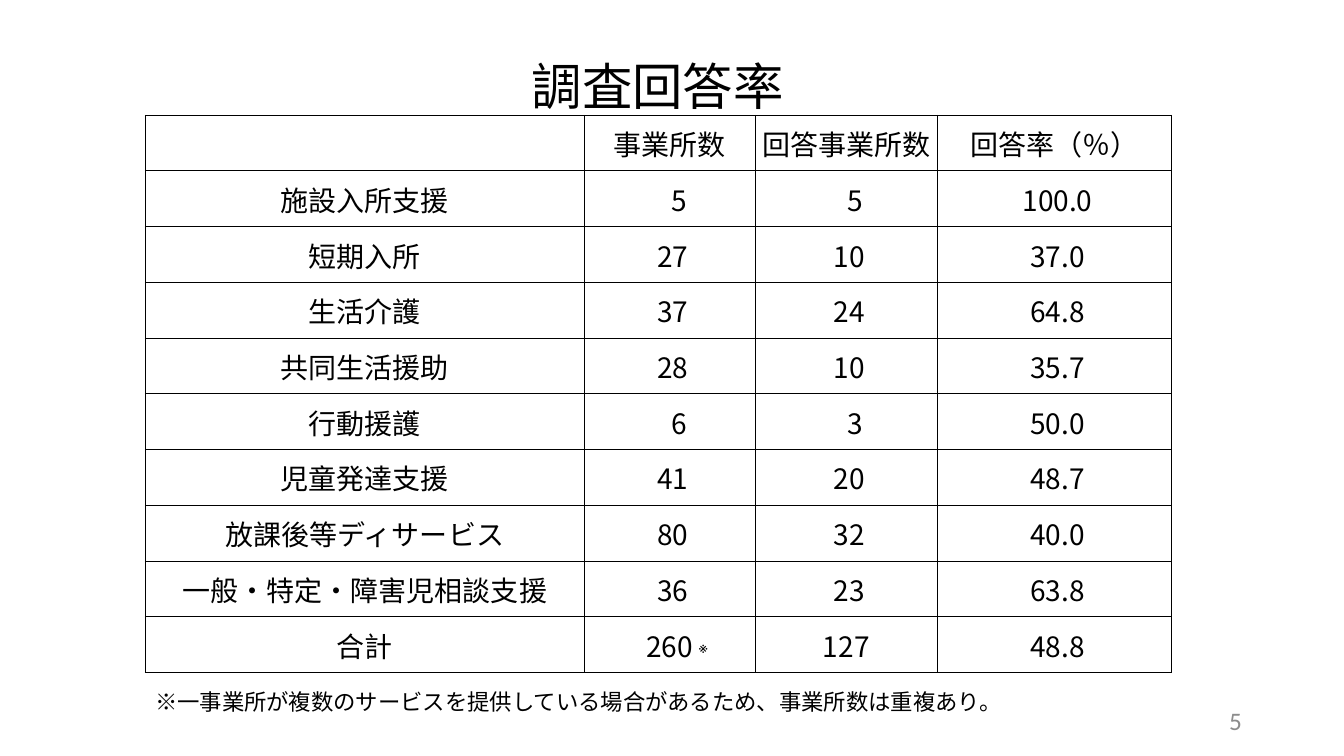
from dataclasses import dataclass

from lxml.etree import SubElement
from pptx import Presentation
from pptx.dml.color import RGBColor
from pptx.enum.text import MSO_ANCHOR, PP_ALIGN
from pptx.oxml.ns import qn
from pptx.util import Pt


@dataclass(frozen=True)
class Theme:
    ink: str = "000000"
    muted: str = "8C8C8C"
    cjk: str = "Noto Sans CJK JP"
    latin: str = "Calibri"
    mark_font: str = "Arial"
    title: int = 36
    cell: int = 20
    note: int = 16
    number: int = 18
    mark: int = 12
    border: float = 0.5
    cell_inset: float = 0.6


THEME = Theme()
COL_WIDTHS = (313.9, 121.7, 130.4, 167)
ROWS = [
    ("", "事業所数", "回答事業所数", "回答率（％）"),
    ("施設入所支援", "5", "5", "100.0"),
    ("短期入所", "27", "10", "37.0"),
    ("生活介護", "37", "24", "64.8"),
    ("共同生活援助", "28", "10", "35.7"),
    ("行動援護", "6", "3", "50.0"),
    ("児童発達支援", "41", "20", "48.7"),
    ("放課後等ディサービス", "80", "32", "40.0"),
    ("一般・特定・障害児相談支援", "36", "23", "63.8"),
    ("合計", "260", "127", "48.8"),
]
# Left inset that lines up centred figures, by number of characters
FIGURE_SHIFT = {1: 13.5, 2: 4.5, 3: 0, 4: 4.5, 5: 4.5}


def write(tf, text, size, font, color=THEME.ink, east_asian=THEME.cjk, **para):
    """Put one formatted run in the first paragraph of a text frame."""
    p = tf.paragraphs[0]
    for name, value in para.items():
        setattr(p, name, value)
    r = p.add_run()
    r.text = text
    for name, value in {"size": Pt(size), "name": font}.items():
        setattr(r.font, name, value)
    r.font.color.rgb = RGBColor.from_string(color)
    if east_asian:
        ea = SubElement(r.font._element, qn("a:ea"))
        ea.set("typeface", east_asian)


def add_text(s, box, text, size, font, anchor=MSO_ANCHOR.TOP, **style):
    """Add a wrapping text box filling the given box."""
    tf = s.shapes.add_textbox(*map(Pt, box)).text_frame
    for name, value in {"word_wrap": True, "vertical_anchor": anchor}.items():
        setattr(tf, name, value)
    write(tf, text, size, font, **style)


def add_borders(cell):
    """Draw a thin line on all four sides of a cell."""
    tcPr = cell._tc.get_or_add_tcPr()
    for side in ("lnL", "lnR", "lnT", "lnB"):
        ln = SubElement(tcPr, qn(f"a:{side}"), w=str(Pt(THEME.border)))
        fill = SubElement(ln, qn("a:solidFill"))
        SubElement(fill, qn("a:srgbClr"), val=THEME.ink)


def add_title(s, box):
    add_text(s, box, "調査回答率", THEME.title, THEME.cjk,
             alignment=PP_ALIGN.CENTER, line_spacing=Pt(50))


def add_rate_table(s, box):
    """Response-rate table, with the duplicate-count mark beside the total."""
    left, top, width, height = box
    table = s.shapes.add_table(len(ROWS), len(COL_WIDTHS), *map(Pt, box)).table
    for name in ("first_row", "horz_banding"):
        setattr(table, name, False)
    for col, col_width in zip(table.columns, COL_WIDTHS):
        col.width = Pt(col_width)
    for row in table.rows:
        row.height = Pt(height / len(ROWS))

    for i, values in enumerate(ROWS):
        for j, text in enumerate(values):
            cell = table.cell(i, j)
            shift = FIGURE_SHIFT[len(text)] if i and j else 0
            layout = {
                "vertical_anchor": MSO_ANCHOR.MIDDLE,
                "margin_left": Pt(THEME.cell_inset + shift),
                "margin_right": Pt(THEME.cell_inset),
                "margin_top": Pt(THEME.cell_inset),
                "margin_bottom": 0,
            }
            for name, value in layout.items():
                setattr(cell, name, value)
            add_borders(cell)
            cell.fill.background()
            if text:
                write(cell.text_frame, text, THEME.cell, THEME.cjk,
                      alignment=PP_ALIGN.CENTER)

    # Mark beside the total
    add_text(s, (left + 388, top + height - 28.8, 44, 21.6), "※",
             THEME.mark, THEME.mark_font, east_asian=None)


def add_footer(s, box):
    """Footnote at the left of the box, page number at its lower right."""
    left, top, width, height = box
    add_text(s, (left, top, 749.5, 26.6),
             "※一事業所が複数のサービスを提供している場合があるため、事業所数は重複あり。",
             THEME.note, THEME.latin)
    add_text(s, (left + width - 216, top + height - 28.8, 216, 28.8), "5",
             THEME.number, THEME.latin, anchor=MSO_ANCHOR.MIDDLE,
             color=THEME.muted, alignment=PP_ALIGN.RIGHT)


def main():
    prs = Presentation()
    prs.slide_width, prs.slide_height = Pt(960), Pt(540)
    s = prs.slides.add_slide(prs.slide_layouts[6])
    add_rate_table(s, (103.7, 82.2, sum(COL_WIDTHS), 398))
    add_title(s, (103.7, 28.8, 732.2, 59.8))
    add_footer(s, (103.7, 488.2, 790.5, 41))
    prs.save("out.pptx")


if __name__ == "__main__":
    main()
